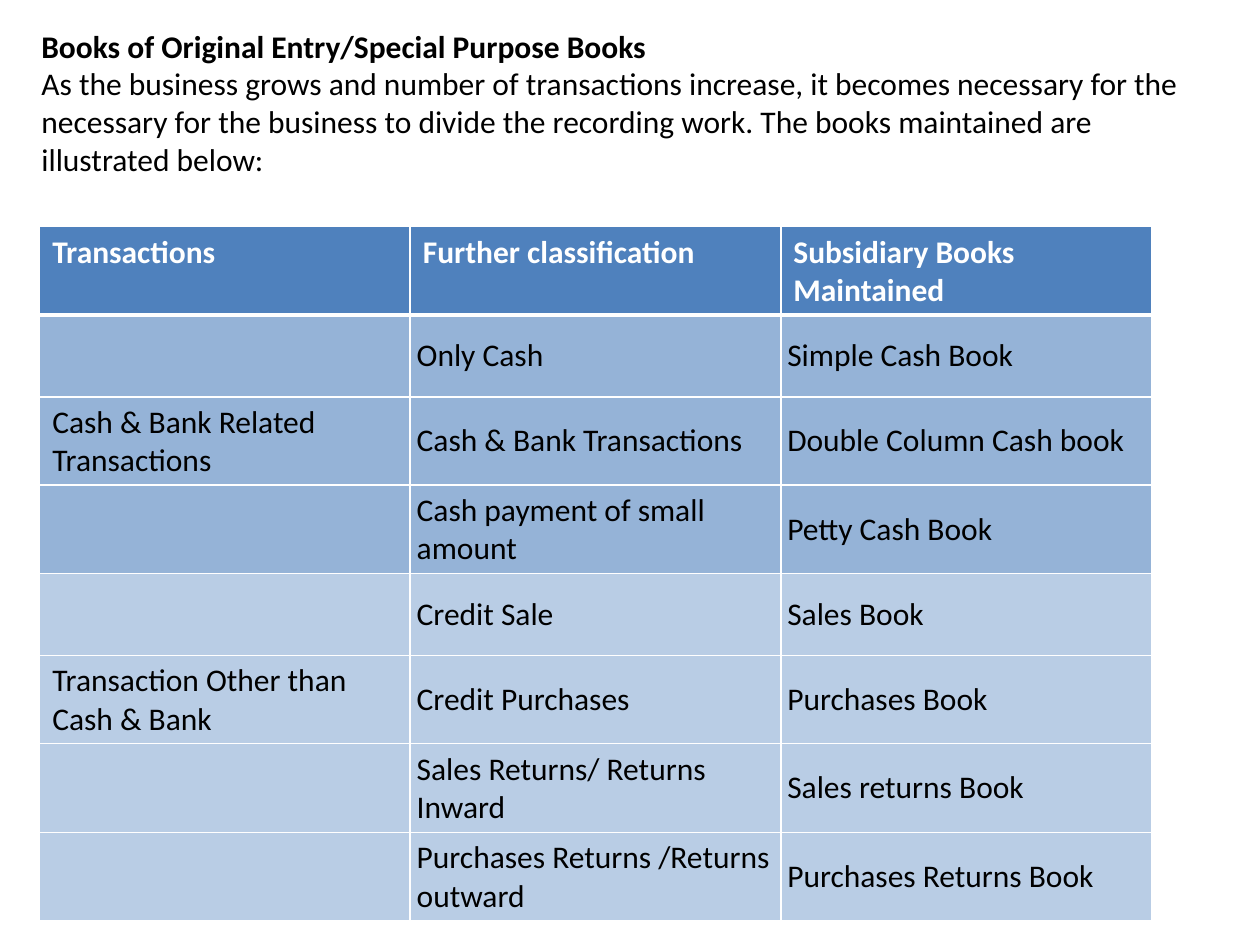
"""Build a slide that lists the books of original entry kept for each kind of transaction."""
import dataclasses

import lxml.etree
import pptx
import pptx.dml.color
import pptx.enum.text
import pptx.oxml.ns
import pptx.util

Cm = pptx.util.Cm
Pt = pptx.util.Pt

COLORS = {
    "header": "4F81BD",
    "cash": "95B3D7",
    "credit": "B9CDE5",
    "border": "FFFFFF",
    "header_text": "FFFFFF",
    "text": "000000",
}
FONT_NAME = "Calibri"
FONT_SIZE = Pt(18)
COLUMN_WIDTH = Cm(7.47)
ROW_HEIGHT = Cm(1.65)
HEADING = "Books of Original Entry/Special Purpose Books"
INTRODUCTION = (
    "As the business grows and number of transactions increase, it becomes necessary for the "
    "necessary for the business to divide the recording work. "
    "The books maintained are illustrated below:"
)


@dataclasses.dataclass(frozen=True)
class BookRow:
    fill: str
    transactions: str
    classification: str
    book: str


BOOK_ROWS = [
    BookRow("header", "Transactions", "Further classification", "Subsidiary Books Maintained"),
    BookRow("cash", "", "Only Cash", "Simple Cash Book"),
    BookRow("cash", "Cash & Bank Related Transactions", "Cash & Bank Transactions", "Double Column Cash book"),
    BookRow("cash", "", "Cash payment of small amount", "Petty Cash Book"),
    BookRow("credit", "", "Credit Sale", "Sales Book"),
    BookRow("credit", "Transaction Other than Cash & Bank", "Credit Purchases", "Purchases Book"),
    BookRow("credit", "", "Sales Returns/ Returns Inward", "Sales returns Book"),
    BookRow("credit", "", "Purchases Returns /Returns outward", "Purchases Returns Book"),
]


def color(name: str) -> pptx.dml.color.RGBColor:
    """Return the named colour."""
    return pptx.dml.color.RGBColor.from_string(COLORS[name])


def format_paragraph(paragraph, color_name: str) -> None:
    """Apply the common font in the given colour."""
    paragraph.font.name = FONT_NAME
    paragraph.font.size = FONT_SIZE
    paragraph.font.color.rgb = color(color_name)


def set_borders(cell, top: float, bottom: float) -> None:
    """Draw solid cell borders with the given top and bottom widths in points."""
    properties = cell._tc.get_or_add_tcPr()
    for side, width in {"L": 1, "R": 1, "T": top, "B": bottom}.items():
        line = lxml.etree.SubElement(properties, pptx.oxml.ns.qn(f"a:ln{side}"), w=str(Pt(width)))
        fill = lxml.etree.SubElement(line, pptx.oxml.ns.qn("a:solidFill"))
        lxml.etree.SubElement(fill, pptx.oxml.ns.qn("a:srgbClr"), val=COLORS["border"])


def fill_cell(cell, text: str, row_index: int, column_index: int, fill_name: str) -> None:
    """Write and format one table cell."""
    is_header = row_index == 0
    set_borders(cell, top=3 if row_index == 1 else 1, bottom=3 if is_header else 1)
    cell.fill.solid()
    cell.fill.fore_color.rgb = color(fill_name)
    cell.text = text
    paragraph = cell.text_frame.paragraphs[0]
    format_paragraph(paragraph, "header_text" if is_header else "text")
    paragraph.font.bold = is_header
    if not is_header and column_index > 0:
        cell.vertical_anchor = pptx.enum.text.MSO_ANCHOR.MIDDLE
        cell.margin_left = cell.margin_right = Cm(0.13)
        cell.margin_top = cell.margin_bottom = Cm(0.13)


def add_book_table(slide, rows: list[BookRow]) -> None:
    """Add the table of transactions and books."""
    shape = slide.shapes.add_table(
        len(rows), 3, Cm(0.8), Cm(4.57), COLUMN_WIDTH * 3, ROW_HEIGHT * len(rows)
    )
    table = shape.table
    table.horz_banding = False
    for column in table.columns:
        column.width = COLUMN_WIDTH
    for row_index, row in enumerate(rows):
        table.rows[row_index].height = ROW_HEIGHT
        for column_index, text in enumerate((row.transactions, row.classification, row.book)):
            fill_cell(table.cell(row_index, column_index), text, row_index, column_index, row.fill)


def write_title(title) -> None:
    """Place the heading and introduction in the title placeholder."""
    title.left, title.top, title.width, title.height = Cm(0.58), Cm(0.41), Cm(24), Cm(3.33)
    frame = title.text_frame
    frame.word_wrap = True
    frame.auto_size = pptx.enum.text.MSO_AUTO_SIZE.SHAPE_TO_FIT_TEXT
    frame.vertical_anchor = pptx.enum.text.MSO_ANCHOR.TOP
    paragraph = frame.paragraphs[0]
    paragraph.alignment = pptx.enum.text.PP_ALIGN.LEFT
    format_paragraph(paragraph, "text")
    heading = paragraph.add_run()
    heading.text = HEADING
    heading.font.bold = True
    paragraph.add_line_break()
    paragraph.add_run().text = INTRODUCTION


def main() -> None:
    """Build and save the presentation."""
    presentation = pptx.Presentation()
    presentation.slide_width, presentation.slide_height = Cm(25.4), Cm(19.05)
    slide = presentation.slides.add_slide(presentation.slide_layouts[5])
    write_title(slide.shapes.title)
    add_book_table(slide, BOOK_ROWS)
    presentation.save("out.pptx")


if __name__ == "__main__":
    main()
